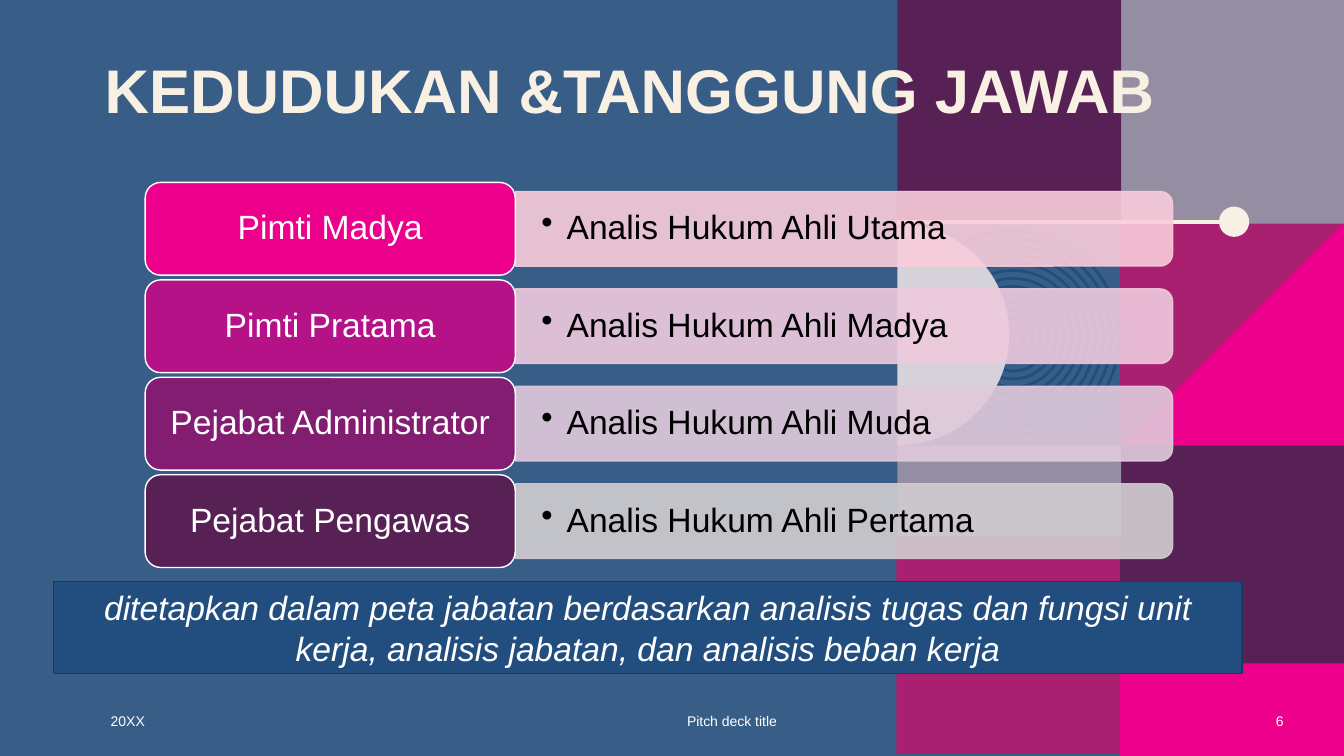
import math

from lxml import etree
from pptx import Presentation
from pptx import util as u
from pptx.dml.color import RGBColor
from pptx.enum import shapes, text
from pptx.oxml.ns import qn

COLORS = {
    "background": "385E88", "navy": "224E7F", "navy_edge": "193A5E",
    "pink": "EC008C", "magenta": "AA2070", "plum": "582156",
    "grey": "958EA2", "pale_grey": "D5D2DA", "cream": "F8F0E3",
    "white": "FFFFFF", "black": "000000",
    "madya": "EC008C", "madya_bar": "F8CCDA",
    "pratama": "B41286", "pratama_bar": "EECADD",
    "administrator": "821D72", "administrator_bar": "E1CADB",
    "pengawas": "582156", "pengawas_bar": "D1CDD1",
}
SHAPE = shapes.MSO_SHAPE
ALIGN = text.PP_ALIGN
ANCHOR = text.MSO_ANCHOR


def rgb(name):
    return RGBColor.from_string(COLORS[name])


def write(frame, words, size=24, color="white", bold=False, italic=False,
          align=ALIGN.LEFT, anchor=ANCHOR.MIDDLE, spacing=None, bullet=False,
          inset=(0.1, 0.05)):
    frame.word_wrap = True
    frame.vertical_anchor = anchor
    frame.margin_left = frame.margin_right = u.Inches(inset[0])
    frame.margin_top = frame.margin_bottom = u.Inches(inset[1])
    paragraph = frame.paragraphs[0]
    if bullet:
        properties = paragraph._p.get_or_add_pPr()
        properties.set("marL", str(u.Inches(0.25)))
        properties.set("indent", str(-u.Inches(0.25)))
        etree.SubElement(properties, qn("a:buChar")).set("char", "•")
    paragraph.alignment = align
    if spacing:
        paragraph.line_spacing = spacing
    run = paragraph.add_run()
    run.text = words
    run.font.name = "Arial"
    run.font.size = u.Pt(size)
    run.font.bold = bold
    run.font.italic = italic
    run.font.color.rgb = rgb(color)


class Deck:
    def __init__(self):
        self.file = Presentation()
        self.file.slide_width = u.Inches(13.33)
        self.file.slide_height = u.Inches(7.5)
        self.slide = self.file.slides.add_slide(self.file.slide_layouts[6])
        self.slide.background.fill.solid()
        self.slide.background.fill.fore_color.rgb = rgb("background")

    def paint(self, item, fill=None, line=None, weight=1, opacity=None):
        item.shadow.inherit = False
        for part, color in ((item.fill, fill), (item.line.fill, line)):
            if color:
                part.solid()
                part.fore_color.rgb = rgb(color)
            else:
                part.background()
        if line:
            item.line.width = u.Pt(weight)
        if opacity:
            for color in item._element.spPr.iter(qn("a:srgbClr")):
                etree.SubElement(color, qn("a:alpha")).set("val", str(opacity * 1000))
        return item

    def shape(self, kind, left, top, width, height, **style):
        item = self.slide.shapes.add_shape(
            kind, u.Inches(left), u.Inches(top), u.Inches(width), u.Inches(height))
        return self.paint(item, **style)

    def outline(self, points, fill):
        corners = [(u.Inches(x), u.Inches(y)) for x, y in points]
        builder = self.slide.shapes.build_freeform(*corners[0])
        builder.add_line_segments(corners[1:], close=True)
        return self.paint(builder.convert_to_shape(), fill=fill)

    def line(self, start, end, color, weight):
        item = self.slide.shapes.add_connector(
            shapes.MSO_CONNECTOR.STRAIGHT,
            *(u.Inches(value) for value in (*start, *end)))
        item.line.color.rgb = rgb(color)
        item.line.width = u.Pt(weight)
        etree.SubElement(item._element.spPr, qn("a:effectLst"))

    def text(self, words, left, top, width, height, **style):
        box = self.slide.shapes.add_textbox(
            u.Inches(left), u.Inches(top), u.Inches(width), u.Inches(height))
        write(box.text_frame, words, **style)


def draw_pattern(deck):
    tile = 2.22
    deck.shape(SHAPE.RECTANGLE, 11.11, 2.2, tile, tile, fill="pink")
    deck.outline([(11.11, 2.21), (13.33, 2.21), (11.11, 4.43)], "magenta")
    for left, top, height, color in (
            (11.11, 0, tile, "grey"), (8.9, -0.01, tile, "plum"),
            (8.89, 5.26, tile, "magenta"), (11.11, 4.42, tile, "plum"),
            (11.11, 6.58, 0.92, "pink")):
        deck.shape(SHAPE.RECTANGLE, left, top, tile, height, fill=color)
    for ring in range(13):
        radius = 1.05 - 0.945 * ring / 12
        deck.shape(SHAPE.OVAL, 10.05 - radius, 3.34 - radius,
                   2 * radius, 2 * radius, line="navy", weight=2)
    deck.shape(SHAPE.RECTANGLE, 8.9, 4.42, tile, 0.9, fill="grey")
    angles = [math.radians(degree) for degree in range(-90, 91, 3)]
    deck.outline([(8.9 + 1.11 * math.cos(a), 3.32 + 1.1 * math.sin(a))
                  for a in angles], "pale_grey")
    deck.line((8.9, 2.2), (12.23, 2.2), "cream", 3)
    deck.shape(SHAPE.OVAL, 12.09, 2.05, 0.3, 0.3, fill="cream")


def draw_positions(deck):
    positions = (
        ("madya", "Pimti Madya", "Analis Hukum Ahli Utama"),
        ("pratama", "Pimti Pratama", "Analis Hukum Ahli Madya"),
        ("administrator", "Pejabat Administrator", "Analis Hukum Ahli Muda"),
        ("pengawas", "Pejabat Pengawas", "Analis Hukum Ahli Pertama"),
    )
    for row, (color, official, analyst) in enumerate(positions):
        middle = 2.27 + row * 2.9 / 3
        bar = deck.shape(SHAPE.ROUND_2_SAME_RECTANGLE, 8, middle - 3.26, 0.74, 6.52,
                         fill=color + "_bar", line=color + "_bar", opacity=90)
        bar.rotation = 90
        deck.text(analyst, 5.1, middle - 0.33, 6.48, 0.66, color="black",
                  spacing=0.9, bullet=True, inset=(0.27, 0.14))
        label = deck.shape(SHAPE.ROUNDED_RECTANGLE, 1.44, middle - 0.46, 3.67, 0.92,
                           fill=color, line="white")
        write(label.text_frame, official, align=ALIGN.CENTER, spacing=0.9)


def main():
    deck = Deck()
    draw_pattern(deck)
    deck.text("KEDUDUKAN &TANGGUNG JAWAB", 0.94, 0.55, 11.64, 1.45, size=44,
              color="cream", bold=True, anchor=ANCHOR.TOP, spacing=0.9)
    for words, left, width, align in (
            ("20XX", 1, 1.2, ALIGN.LEFT),
            ("Pitch deck title", 6.01, 2.5, ALIGN.CENTER),
            ("6", 12.33, 0.5, ALIGN.RIGHT)):
        deck.text(words, left, 6.95, width, 0.4, size=10, align=align)
    draw_positions(deck)
    basis = deck.shape(SHAPE.RECTANGLE, 0.53, 5.77, 11.79, 0.91,
                       fill="navy", line="navy_edge")
    write(basis.text_frame,
          "ditetapkan dalam peta jabatan berdasarkan analisis tugas dan fungsi unit "
          "kerja, analisis jabatan, dan analisis beban kerja",
          italic=True, align=ALIGN.CENTER)
    deck.file.save("out.pptx")


if __name__ == "__main__":
    main()
